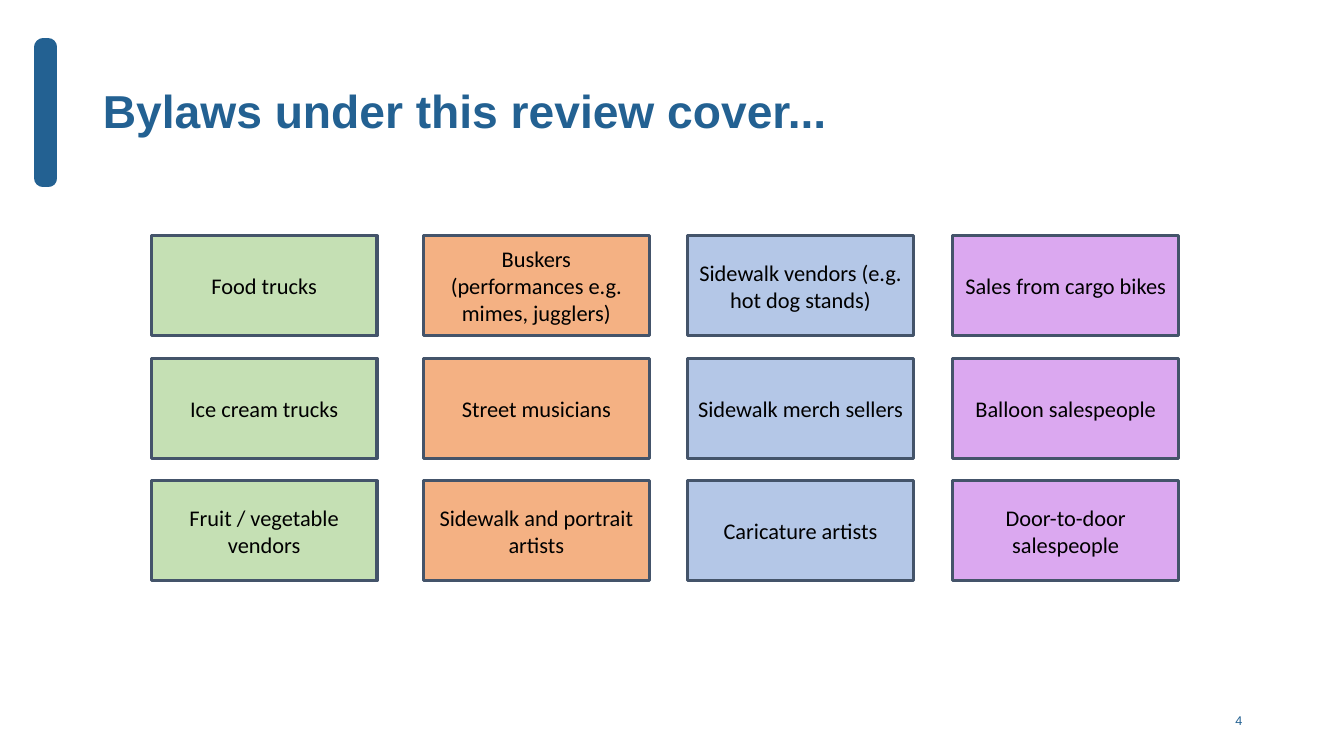
from dataclasses import dataclass

import pptx
import pptx.dml.color
import pptx.enum.shapes
import pptx.enum.text
import pptx.util

Inches = pptx.util.Inches
Align = pptx.enum.text.PP_ALIGN
Middle = pptx.enum.text.MSO_ANCHOR.MIDDLE

COLORS = {
    "brand": "236192",
    "bar": "4472C4",
    "edge": "44546A",
    "text": "000000",
    "green": "C5E0B4",
    "orange": "F4B183",
    "blue": "B4C7E7",
    "purple": "DBA8F0",
}
TOP, STEP = 2.34, 1.215
WIDTH, HEIGHT = 2.24, 0.99


@dataclass
class Column:
    left: float
    fill: str
    labels: tuple[str, ...]


COLUMNS = [
    Column(1.5, "green", ("Food trucks", "Ice cream trucks", "Fruit / vegetable vendors")),
    Column(4.2, "orange", ("Buskers (performances e.g. mimes, jugglers)", "Street musicians",
                           "Sidewalk and portrait artists")),
    Column(6.82, "blue", ("Sidewalk vendors (e.g. hot dog stands)", "Sidewalk merch sellers",
                          "Caricature artists")),
    Column(9.45, "purple", ("Sales from cargo bikes", "Balloon salespeople",
                            "Door-to-door salespeople")),
]


def color(name: str) -> pptx.dml.color.RGBColor:
    return pptx.dml.color.RGBColor.from_string(COLORS[name])


def write(shape, text: str, font: str, size: float, ink: str, align, bold: bool = False) -> None:
    frame = shape.text_frame
    frame.word_wrap = True
    frame.auto_size = pptx.enum.text.MSO_AUTO_SIZE.NONE
    frame.vertical_anchor = Middle
    frame.text = text
    para = frame.paragraphs[0]
    para.alignment = align
    para.font.name = font
    para.font.size = pptx.util.Pt(size)
    para.font.bold = bold
    para.font.color.rgb = color(ink)


def add_box(slide, left: float, top: float, width: float, height: float,
            fill: str, edge: str, weight: float):
    box = slide.shapes.add_shape(
        pptx.enum.shapes.MSO_SHAPE.RECTANGLE,
        Inches(left), Inches(top), Inches(width), Inches(height))
    box.shadow.inherit = False
    box.fill.solid()
    box.fill.fore_color.rgb = color(fill)
    box.line.color.rgb = color(edge)
    box.line.width = pptx.util.Pt(weight)
    return box


def add_title(slide, text: str) -> None:
    title = slide.shapes.title
    title.left, title.top = Inches(0.92), Inches(0.4)
    title.width, title.height = Inches(11.5), Inches(1.45)
    write(title, text, "Arial", 33, "brand", Align.LEFT, True)
    title.text_frame.paragraphs[0].line_spacing = 0.9


def add_column(slide, column: Column) -> None:
    for row, label in enumerate(column.labels):
        box = add_box(slide, column.left, TOP + row * STEP, WIDTH, HEIGHT,
                      column.fill, "edge", 2.25)
        write(box, label, "Calibri", 16, "text", Align.CENTER)


def main() -> None:
    deck = pptx.Presentation()
    deck.slide_width, deck.slide_height = Inches(13.33), Inches(7.5)
    slide = deck.slides.add_slide(deck.slide_layouts[5])
    add_box(slide, 0.43, 0.47, 0.05, 1.3, "bar", "brand", 13)
    add_title(slide, "Bylaws under this review cover...")
    number = slide.shapes.add_textbox(Inches(9.42), Inches(6.95), Inches(3), Inches(0.4))
    write(number, "4", "Arial", 9, "brand", Align.RIGHT)
    for column in COLUMNS:
        add_column(slide, column)
    deck.save("out.pptx")


if __name__ == "__main__":
    main()
